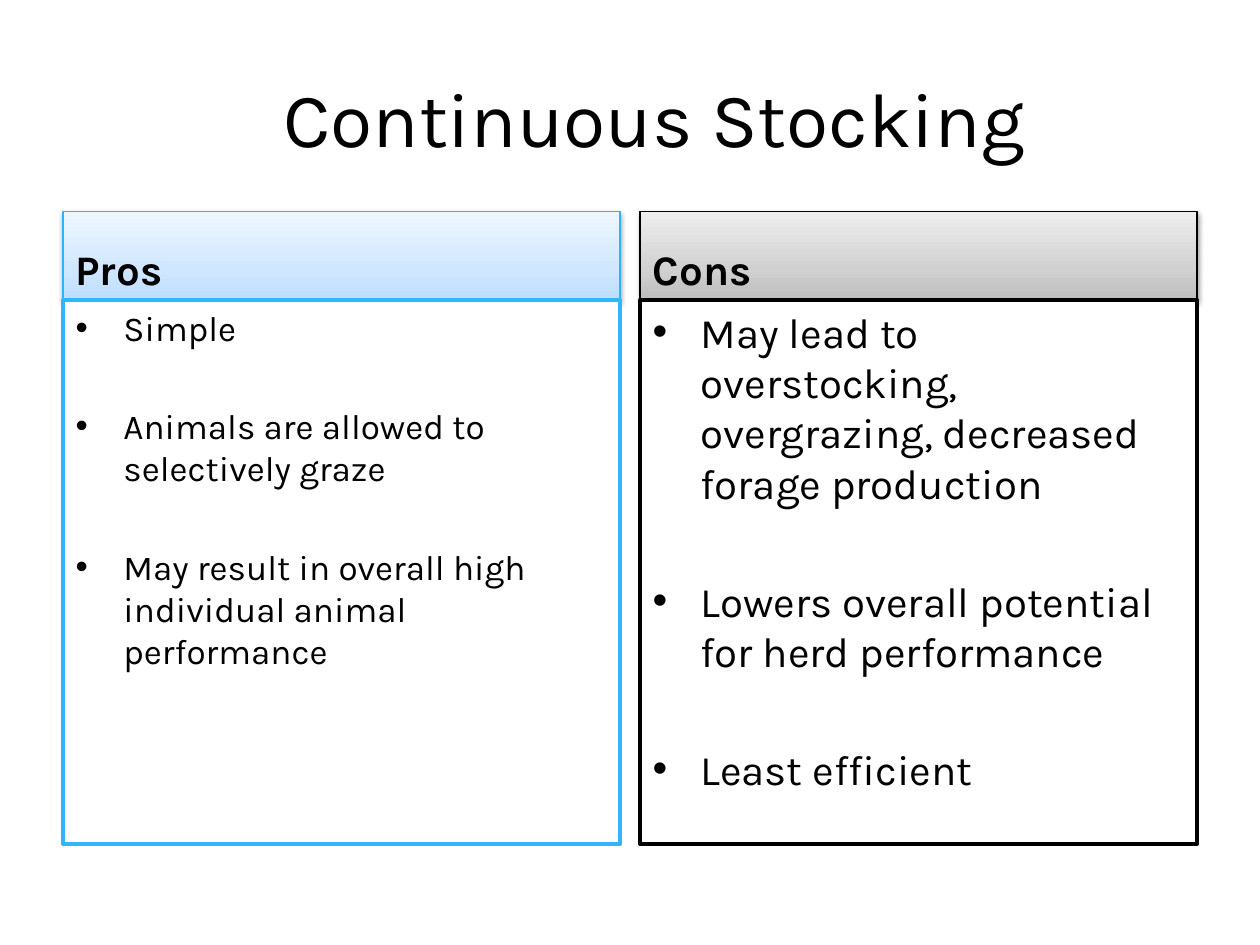
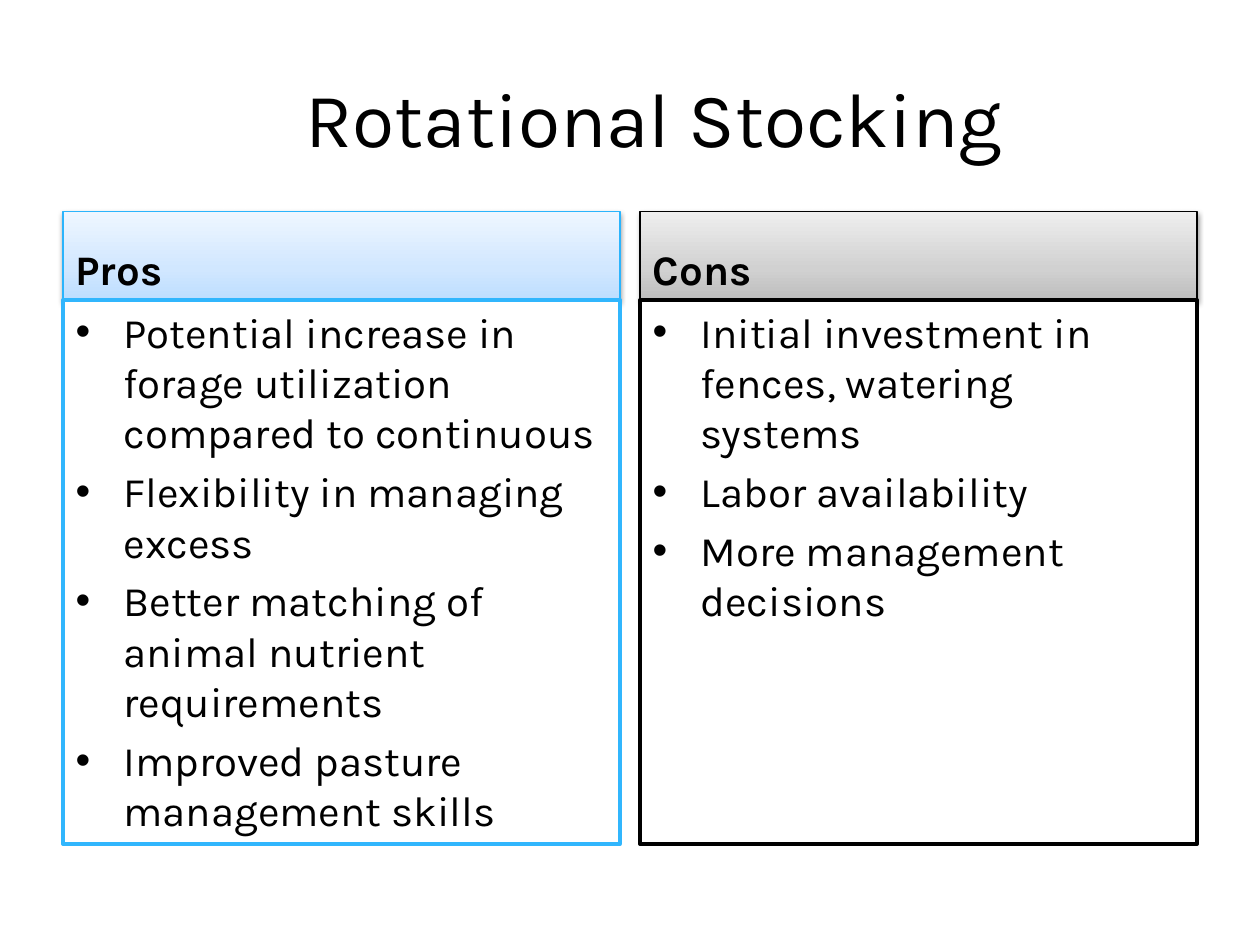
from dataclasses import dataclass

from lxml import etree
from pptx import Presentation
from pptx.dml import color as dml
from pptx.enum import text as txt
from pptx.oxml import ns
from pptx.util import Inches, Pt

FONT = "Karla"
INK = "000000"
COMPARISON_LAYOUT = 4
HEADING_TOP, HEADING_HEIGHT = 1.68, 0.7
LIST_HEIGHT = 4.32
COLUMN_WIDTH = 4.42
BULLET_INDENT = Inches(0.38)
HEADING_SIZE = 24


@dataclass(frozen=True)
class ColumnStyle:
    heading: str
    left: float
    placeholder: int  # index of the heading; the list follows it
    gradient: tuple[str, str, str]  # bottom to top
    heading_line: str
    list_line: str


@dataclass(frozen=True)
class Points:
    items: tuple[str, ...]
    size: int = 24
    gap: float = 4.8


@dataclass(frozen=True)
class Comparison:
    title: str
    pros: Points
    cons: Points


PROS = ColumnStyle("Pros", 0.5, 1, ("BDDEFF", "D1E7FF", "EEF6FF"), "2BB4FC", "31B6FD")
CONS = ColumnStyle("Cons", 5.08, 3, ("BDBDBD", "D1D1D1", "EEEEEE"), INK, INK)
GRADIENT_POSITIONS = (0, 35, 100)

COMPARISONS = (
    Comparison(
        "Continuous Stocking",
        Points(("Simple",
                "Animals are allowed to selectively graze",
                "May result in overall high individual animal performance"),
               size=20, gap=32.4),
        Points(("May lead to overstocking, overgrazing, decreased forage production",
                "Lowers overall potential for herd performance",
                "Least efficient"),
               gap=38.5),
    ),
    Comparison(
        "Rotational Stocking",
        Points(("Potential increase in forage utilization compared to continuous",
                "Flexibility in managing excess",
                "Better matching of animal nutrient requirements",
                "Improved pasture management skills")),
        Points(("Initial investment in fences, watering systems",
                "Labor availability",
                "More management decisions")),
    ),
)


def rgb(value: str) -> dml.RGBColor:
    return dml.RGBColor.from_string(value)


def add_element(parent, tag: str, **attributes: str):
    return etree.SubElement(parent, ns.qn(tag), attributes)


def place(shape, left: float, top: float, width: float, height: float) -> None:
    shape.left, shape.top = Inches(left), Inches(top)
    shape.width, shape.height = Inches(width), Inches(height)


def prepare_frame(shape, anchor):
    frame = shape.text_frame
    frame.word_wrap = True
    frame.auto_size = txt.MSO_AUTO_SIZE.NONE
    frame.vertical_anchor = anchor
    return frame


def add_run(paragraph, words: str, size: int, bold: bool = False) -> None:
    run = paragraph.add_run()
    run.text = words
    run.font.name, run.font.size, run.font.bold = FONT, Pt(size), bold
    run.font.color.rgb = rgb(INK)


def outline(shape, colour: str, width: float) -> None:
    shape.line.color.rgb = rgb(colour)
    shape.line.width = Pt(width)
    shape.shadow.inherit = False


def fill_gradient(shape, colours: tuple[str, ...]) -> None:
    """Blend the colours from the bottom edge to the top."""
    shape.fill.gradient()
    shape.fill.gradient_angle = 90
    stops = next(shape.element.iter(ns.qn("a:gsLst")))
    for stop in list(stops):
        stops.remove(stop)
    for position, colour in zip(GRADIENT_POSITIONS, colours):
        stop = add_element(stops, "a:gs", pos=str(position * 1000))
        add_element(stop, "a:srgbClr", val=colour)


def cast_shadow(shape) -> None:
    effects = next(shape.element.iter(ns.qn("a:effectLst")))
    shadow = add_element(effects, "a:outerShdw", blurRad=str(Pt(3.1)), dist=str(Pt(1.6)),
                         dir="5400000", rotWithShape="0")
    colour = add_element(shadow, "a:srgbClr", val=INK)
    add_element(colour, "a:alpha", val="38000")


def set_bullet(paragraph) -> None:
    properties = paragraph._p.get_or_add_pPr()
    properties.set("marL", str(BULLET_INDENT))
    properties.set("indent", str(-BULLET_INDENT))
    add_element(properties, "a:buFont", typeface="Arial")
    add_element(properties, "a:buChar", char="•")


def draw_title(slide, words: str) -> None:
    title = slide.shapes.title
    place(title, 0.89, 0.3, 8.61, 1.25)
    paragraph = prepare_frame(title, txt.MSO_ANCHOR.MIDDLE).paragraphs[0]
    paragraph.alignment = txt.PP_ALIGN.CENTER
    add_run(paragraph, words, 44)


def draw_heading(heading, style: ColumnStyle) -> None:
    place(heading, style.left, HEADING_TOP, COLUMN_WIDTH, HEADING_HEIGHT)
    fill_gradient(heading, style.gradient)
    outline(heading, style.heading_line, 0.75)
    cast_shadow(heading)
    paragraph = prepare_frame(heading, txt.MSO_ANCHOR.BOTTOM).paragraphs[0]
    paragraph.space_before = Pt(0)
    add_run(paragraph, style.heading, HEADING_SIZE, bold=True)


def draw_list(body, style: ColumnStyle, points: Points) -> None:
    place(body, style.left, HEADING_TOP + HEADING_HEIGHT, COLUMN_WIDTH, LIST_HEIGHT)
    body.fill.solid()
    body.fill.fore_color.rgb = rgb("FFFFFF")
    outline(body, style.list_line, 2)
    frame = prepare_frame(body, txt.MSO_ANCHOR.TOP)
    for number, item in enumerate(points.items):
        paragraph = frame.add_paragraph() if number else frame.paragraphs[0]
        set_bullet(paragraph)
        paragraph.space_before = Pt(points.gap if number else 0)
        add_run(paragraph, item, points.size)


def draw_comparison(deck, comparison: Comparison) -> None:
    slide = deck.slides.add_slide(deck.slide_layouts[COMPARISON_LAYOUT])
    draw_title(slide, comparison.title)
    holders = {holder.placeholder_format.idx: holder for holder in slide.placeholders}
    for style, points in ((PROS, comparison.pros), (CONS, comparison.cons)):
        draw_heading(holders[style.placeholder], style)
        draw_list(holders[style.placeholder + 1], style, points)


def main() -> None:
    deck = Presentation()
    deck.slide_width, deck.slide_height = Inches(10), Inches(7.5)
    for comparison in COMPARISONS:
        draw_comparison(deck, comparison)
    deck.save("out.pptx")


if __name__ == "__main__":
    main()
